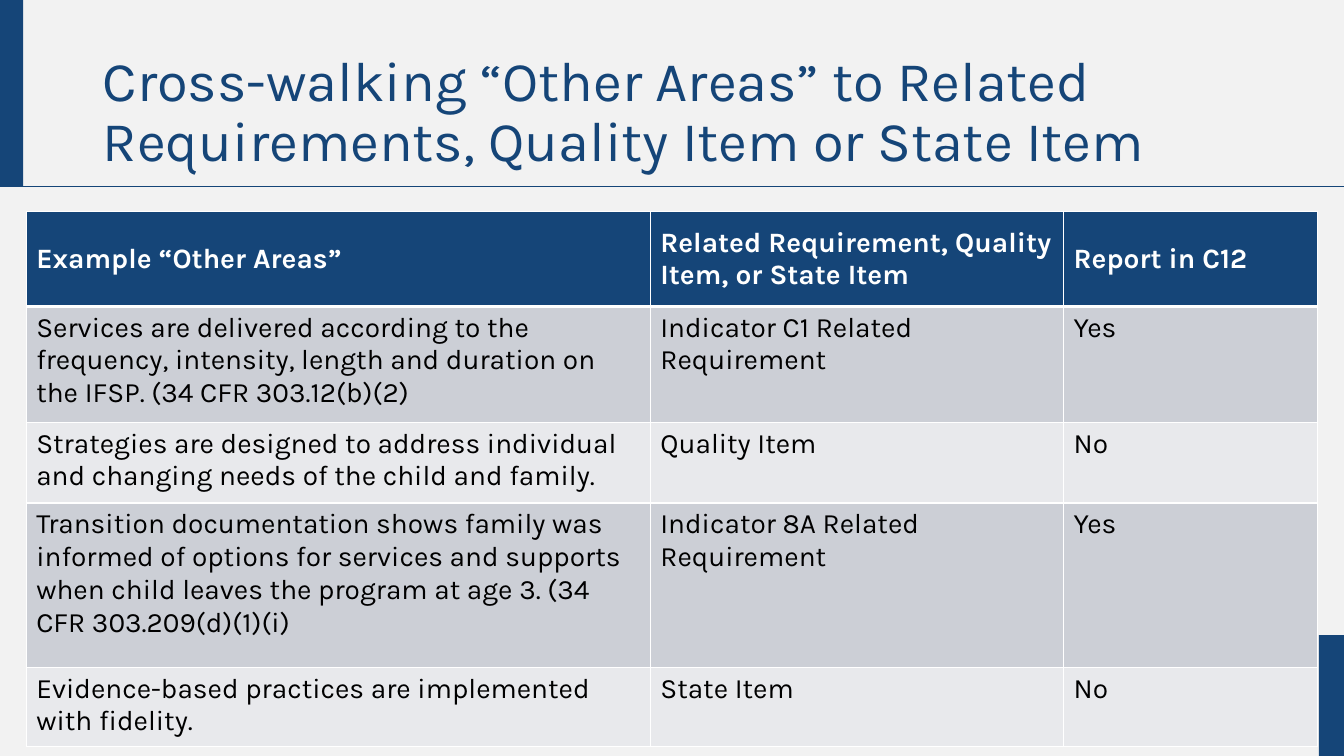
from lxml import etree
from pptx import Presentation
from pptx.dml.color import RGBColor
from pptx.enum.shapes import MSO_CONNECTOR, MSO_SHAPE
from pptx.enum.text import MSO_ANCHOR, MSO_AUTO_SIZE, PP_ALIGN
from pptx.oxml.ns import qn
from pptx.util import Inches, Pt

LINE = MSO_CONNECTOR.STRAIGHT
RECT = MSO_SHAPE.RECTANGLE
TOP, MIDDLE = MSO_ANCHOR.TOP, MSO_ANCHOR.MIDDLE
LEFT = PP_ALIGN.LEFT
NO_FIT = MSO_AUTO_SIZE.NONE

COLORS = {"back": "F2F2F2", "navy": "154578", "white": "FFFFFF",
          "black": "000000", "dark": "CCCFD6", "light": "E8E9EC"}

WIDTHS = [6.19, 4.1, 2.52]
HEIGHTS = [0.94, 1.15, 0.8, 1.63, 0.79]
ROWS = [
    ("Example “Other Areas”",
     "Related Requirement, Quality Item, or State Item",
     "Report in C12"),
    ("Services are delivered according to the frequency, intensity, length "
     "and duration on the IFSP. (34 CFR 303.12(b)(2)",
     "Indicator C1 Related Requirement", "Yes"),
    ("Strategies are designed to address individual and changing needs "
     "of the child and family.",
     "Quality Item", "No"),
    ("Transition documentation shows family was informed of options for "
     "services and supports when child leaves the program at age 3. "
     "(34 CFR 303.209(d)(1)(i)",
     "Indicator 8A Related Requirement", "Yes"),
    ("Evidence-based practices are implemented with fidelity.",
     "State Item", "No"),
]


def rgb(name):
    return RGBColor.from_string(COLORS[name])


class Deck:
    """Holds the font and the slide being built."""
    face = "Karla"

    def __init__(self, prs):
        self.slide = prs.slides.add_slide(prs.slide_layouts[5])
        fill = self.slide.background.fill
        fill.solid()
        fill.fore_color.rgb = rgb("back")

    def add_text(self, frame, text, size, color, bold=False):
        para = frame.paragraphs[0]
        para.alignment = LEFT
        run = para.add_run()
        run.text = text
        font = run.font
        font.name, font.size, font.bold = self.face, Pt(size), bold
        font.color.rgb = rgb(color)
        return para

    def title(self, text, left, top, width, height):
        shape = self.slide.shapes.title
        shape.left, shape.top = Inches(left), Inches(top)
        shape.width, shape.height = Inches(width), Inches(height)
        frame = shape.text_frame
        frame.word_wrap = True
        frame.auto_size = NO_FIT
        frame.vertical_anchor = MIDDLE
        self.add_text(frame, text, 40, "navy").line_spacing = 0.9

    def bar(self, left, top, width, height):
        box = self.slide.shapes.add_shape(
            RECT, Inches(left), Inches(top), Inches(width), Inches(height))
        box.shadow.inherit = False
        box.fill.solid()
        box.fill.fore_color.rgb = rgb("navy")
        box.line.fill.background()

    def rule(self, left, right, y):
        line = self.slide.shapes.add_connector(
            LINE, Inches(left), Inches(y), Inches(right), Inches(y))
        line.line.color.rgb = rgb("navy")
        line.line.width = Pt(0.5)
        etree.SubElement(line._element.spPr, qn("a:effectLst"))

    def edges(self, cell, above, below):
        """Draw white cell borders, with top and bottom widths in points."""
        props = cell._tc.get_or_add_tcPr()
        for side, width in zip("LRTB", (1, 1, above, below)):
            edge = etree.SubElement(props, qn("a:ln" + side), w=str(Pt(width)))
            fill = etree.SubElement(edge, qn("a:solidFill"))
            etree.SubElement(fill, qn("a:srgbClr"), val=COLORS["white"])

    def table(self, rows, left, top, widths, heights):
        grid = self.slide.shapes.add_table(
            len(rows), len(widths), Inches(left), Inches(top),
            Inches(sum(widths)), Inches(sum(heights))).table
        for col, width in zip(grid.columns, widths):
            col.width = Inches(width)
        for r, row in enumerate(rows):
            grid.rows[r].height = Inches(heights[r])
            head = r == 0
            shade = "navy" if head else "dark" if r % 2 else "light"
            for c, text in enumerate(row):
                cell = grid.cell(r, c)
                self.edges(cell, 3 if r == 1 else 1, 3 if head else 1)
                cell.fill.solid()
                cell.fill.fore_color.rgb = rgb(shade)
                cell.vertical_anchor = MIDDLE if head else TOP
                self.add_text(cell.text_frame, text, 20,
                              "white" if head else "black", head)


def main():
    prs = Presentation()
    prs.slide_width, prs.slide_height = Inches(13.33), Inches(7.5)
    deck = Deck(prs)
    deck.bar(-0.02, 0, 0.25, 1.85)
    deck.bar(13.08, 6.3, 0.25, 1.2)
    deck.rule(-0.02, 13.33, 1.85)
    deck.title("Cross-walking “Other Areas” to Related Requirements, "
               "Quality Item or State Item", 0.92, 0.4, 11.5, 1.45)
    deck.table(ROWS, 0.26, 2.1, WIDTHS, HEIGHTS)
    prs.save("out.pptx")


if __name__ == "__main__":
    main()
